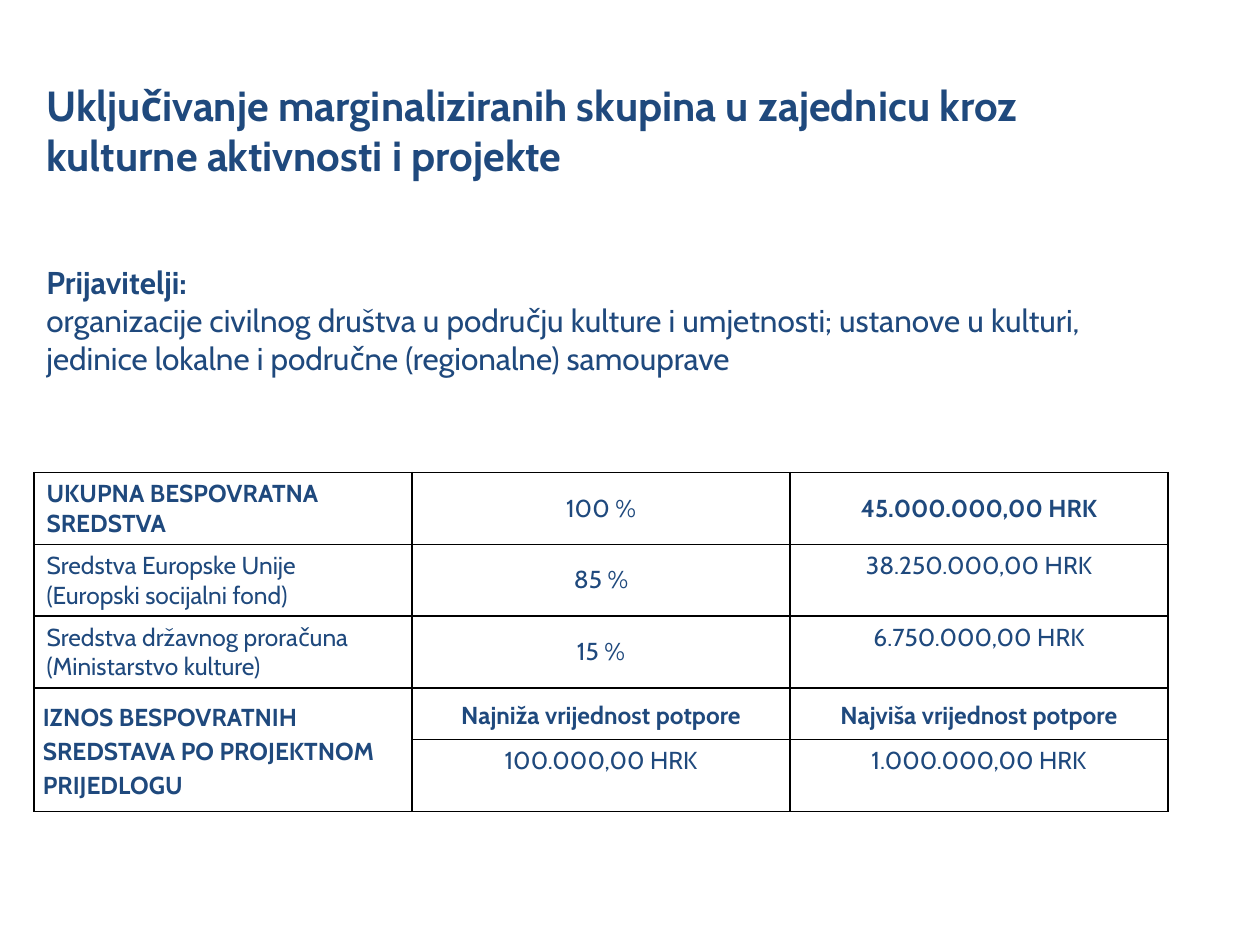
from lxml.etree import SubElement
from pptx import Presentation
from pptx.dml.color import RGBColor
from pptx.enum.text import MSO_ANCHOR, PP_ALIGN
from pptx.oxml.ns import qn
from pptx.util import Inches, Pt

NAVY = RGBColor(0x1F, 0x49, 0x7D)
BLACK = RGBColor(0, 0, 0)
FONT = "Cabin"
LEFT = 0.27

FUNDING = [
    ("UKUPNA BESPOVRATNA SREDSTVA", "100 %", "45.000.000,00 HRK"),
    ("Sredstva Europske Unije\n(Europski socijalni fond)", "85 %", "38.250.000,00 HRK"),
    ("Sredstva državnog proračuna\n(Ministarstvo kulture)", "15 %", "6.750.000,00 HRK"),
    ("IZNOS BESPOVRATNIH SREDSTAVA PO PROJEKTNOM PRIJEDLOGU",
     "Najniža vrijednost potpore", "Najviša vrijednost potpore"),
    ("", "100.000,00 HRK", "1.000.000,00 HRK"),
]
ROW_HEIGHTS = [0.57, 0.57, 0.57, 0.41, 0.57]
BOLD_CELLS = {(0, 0), (0, 2), (3, 0), (3, 1), (3, 2)}
TOP_CELLS = {(1, 2), (2, 2), (4, 1), (4, 2)}
GRANT_ROW = 3


def style(p, size, bold):
    f = p.font
    f.name, f.size, f.bold = FONT, Pt(size), bold
    f.color.rgb = NAVY


def add_text(slide, box, lines):
    """Write (text, size, bold) lines, one paragraph each, into a box."""
    tf = slide.shapes.add_textbox(*map(Inches, box)).text_frame
    tf.word_wrap = True
    for i, (text, size, bold) in enumerate(lines):
        p = tf.add_paragraph() if i else tf.paragraphs[0]
        p.text = text
        style(p, size, bold)


def add_borders(cell):
    tc_pr = cell._tc.get_or_add_tcPr()
    for i, side in enumerate(("lnL", "lnR", "lnT", "lnB")):
        ln = SubElement(tc_pr, qn(f"a:{side}"), w=str(Pt(1)))
        fill = SubElement(ln, qn("a:solidFill"))
        SubElement(fill, qn("a:srgbClr"), val=str(BLACK))
        tc_pr.insert(i, ln)


def fill_cell(cell, row, col, text):
    cell.fill.background()
    add_borders(cell)
    top = (row, col) in TOP_CELLS
    cell.vertical_anchor = MSO_ANCHOR.TOP if top else MSO_ANCHOR.MIDDLE
    if row == GRANT_ROW:
        cell.margin_left = cell.margin_right = Inches(0.07)
        cell.margin_top = cell.margin_bottom = 0
    cell.text = text
    for p in cell.text_frame.paragraphs:
        p.alignment = PP_ALIGN.CENTER if col else PP_ALIGN.LEFT
        if row == GRANT_ROW:
            p.line_spacing = 1.15
        style(p, 14, (row, col) in BOLD_CELLS)


def add_funding_table(slide, left, top, width):
    table = slide.shapes.add_table(
        len(FUNDING), 3, Inches(left), Inches(top), Inches(width),
        Inches(sum(ROW_HEIGHTS))).table
    table.first_row = table.horz_banding = False
    for row, height in zip(table.rows, ROW_HEIGHTS):
        row.height = Inches(height)
    for r, texts in enumerate(FUNDING):
        for c, text in enumerate(texts):
            fill_cell(table.cell(r, c), r, c, text)
    table.cell(GRANT_ROW, 0).merge(table.cell(GRANT_ROW + 1, 0))


def main():
    prs = Presentation()
    prs.slide_width, prs.slide_height = Inches(10), Inches(7.5)
    slide = prs.slides.add_slide(prs.slide_layouts[6])
    add_text(slide, (LEFT, 0.58, 9.12, 0.9), [
        ("Uključivanje marginaliziranih skupina u zajednicu kroz "
         "kulturne aktivnosti i projekte", 24, True)])
    add_funding_table(slide, LEFT, 3.75, 9)
    add_text(slide, (LEFT, 2.04, 9, 1.31), [
        ("Prijavitelji:", 18, True),
        ("organizacije civilnog društva u području kulture i umjetnosti; "
         "ustanove u kulturi, jedinice lokalne i područne (regionalne) "
         "samouprave", 18, False)])
    prs.save("out.pptx")


if __name__ == "__main__":
    main()
